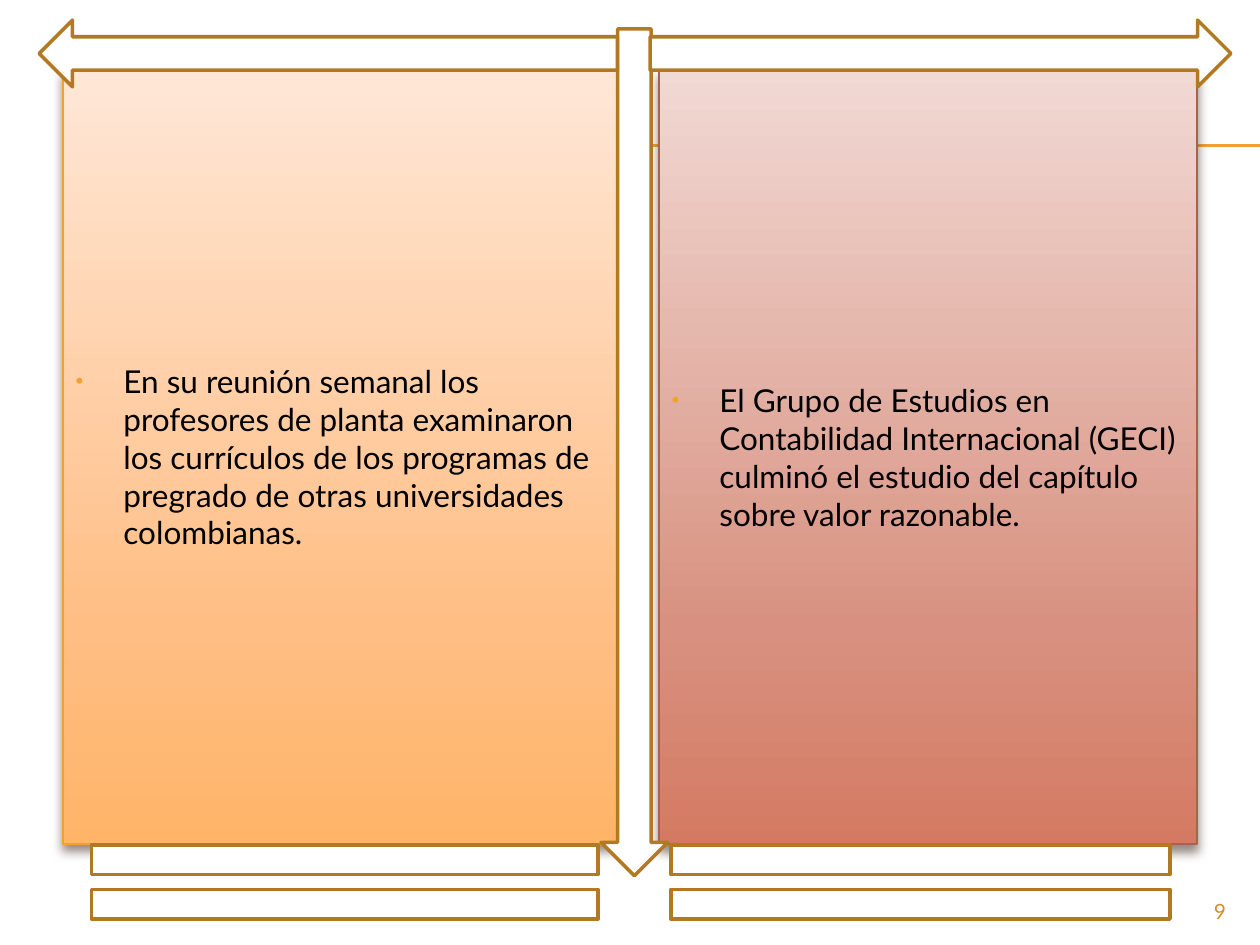
"""Build a two-panel news slide framed by block arrows and equal signs."""
from dataclasses import dataclass

from lxml import etree
from pptx import Presentation
from pptx.dml.color import RGBColor
from pptx.enum.shapes import MSO_CONNECTOR, MSO_SHAPE
from pptx.enum.text import MSO_ANCHOR, MSO_AUTO_SIZE, PP_ALIGN
from pptx.oxml.ns import qn
from pptx.util import Inches, Pt

STRAIGHT = MSO_CONNECTOR.STRAIGHT
DOWN, RIGHT, LEFT = MSO_SHAPE.DOWN_ARROW, MSO_SHAPE.RIGHT_ARROW, MSO_SHAPE.LEFT_ARROW
EQUAL = MSO_SHAPE.MATH_EQUAL
MIDDLE, NO_FIT, ALIGN_RIGHT = MSO_ANCHOR.MIDDLE, MSO_AUTO_SIZE.NONE, PP_ALIGN.RIGHT

WIDTH, HEIGHT = Inches(10), Inches(7.5)
COLUMNS, ROWS = 100, 75
FONT = "Lato"
COLOURS = {
    "text": "000000",
    "white": "FFFFFF",
    "accent": "F0A22E",
    "outline": "B27822",
    "number": "D48F29",
    "brick": "A5644E",
    "shadow": "4E3B30",
}


@dataclass(frozen=True)
class Frame:
    """A rectangle in grid columns and rows."""
    column: float
    row: float
    columns: float
    rows: float

    def lengths(self) -> tuple[int, int, int, int]:
        return (across(self.column), down(self.row),
                across(self.columns), down(self.rows))


@dataclass(frozen=True)
class Panel:
    """A gradient text panel."""
    frame: Frame
    stops: tuple[str, str, str]
    outline: str
    text: str


@dataclass(frozen=True)
class Ornament:
    """A white outlined preset shape."""
    kind: int
    frame: Frame


PANELS = (
    Panel(Frame(5, 5.5, 44.2, 61.5), ("FFE7D7", "FFBE84", "FFB468"), "accent",
          "En su reunión semanal los profesores de planta examinaron los currículos "
          "de los programas de pregrado de otras universidades colombianas."),
    Panel(Frame(52.3, 5.5, 42.7, 61.5), ("F1D9D4", "D89180", "D47A62"), "brick",
          "El Grupo de Estudios en Contabilidad Internacional (GECI) culminó el "
          "estudio del capítulo sobre valor razonable."),
)
ORNAMENTS = (
    Ornament(DOWN, Frame(47.7, 2.3, 5.3, 67.2)),
    Ornament(RIGHT, Frame(51.6, 1.6, 46.1, 5.3)),
    Ornament(LEFT, Frame(3.1, 1.6, 45.9, 5.3)),
    Ornament(EQUAL, Frame(0, 65, 54.7, 10)),
    Ornament(EQUAL, Frame(46.1, 65, 53.9, 10)),
)
RULE_ROWS = (11.5, 11.6)
NUMBER_FRAME = Frame(90, 70.8, 8.3, 2.7)


def across(columns: float) -> int:
    return round(WIDTH * columns / COLUMNS)


def down(rows: float) -> int:
    return round(HEIGHT * rows / ROWS)


def colour(name: str) -> RGBColor:
    return RGBColor.from_string(COLOURS[name])


def add_node(parent, tag: str, **attributes):
    """Append a drawing element with its attributes."""
    node = etree.SubElement(parent, qn(tag))
    for name, value in attributes.items():
        node.set(name, str(value))
    return node


def set_outline(line, name: str, width: float) -> None:
    line.color.rgb = colour(name)
    line.width = Pt(width)


def write(paragraph, text: str, size: float, name: str) -> None:
    span = paragraph.add_run()
    span.text = text
    span.font.name, span.font.size = FONT, Pt(size)
    span.font.color.rgb = colour(name)


def draw_rule(page, row: float) -> None:
    rule = page.shapes.add_connector(STRAIGHT, across(5.6), down(row), WIDTH, down(row))
    set_outline(rule.line, "accent", 0.75)
    add_node(rule._element.spPr, "a:effectLst")


def set_bullet(paragraph) -> None:
    """Give the paragraph a hanging accent bullet."""
    properties = paragraph._p.get_or_add_pPr()
    properties.set("marL", str(Inches(0.38)))
    properties.set("indent", str(-Inches(0.38)))
    tint = add_node(properties, "a:buClr")
    add_node(tint, "a:srgbClr", val=COLOURS["accent"])
    add_node(properties, "a:buSzPct", val=70000)
    add_node(properties, "a:buFont", typeface="Arial")
    add_node(properties, "a:buChar", char="•")


def draw_panel(box, panel: Panel) -> None:
    """Place and format a body placeholder as a gradient panel."""
    box.left, box.top, box.width, box.height = panel.frame.lengths()
    properties = box._element.spPr
    gradient = add_node(properties, "a:gradFill", rotWithShape=1)
    stops = add_node(gradient, "a:gsLst")
    for share, value in zip((0, 72, 100), panel.stops):
        stop = add_node(stops, "a:gs", pos=share * 1000)
        add_node(stop, "a:srgbClr", val=value)
    add_node(gradient, "a:lin", ang=90 * 60000, scaled=0)
    set_outline(box.line, panel.outline, 0.79)
    effects = add_node(properties, "a:effectLst")
    shadow = add_node(effects, "a:outerShdw", blurRad=Pt(6), dist=Pt(4),
                      dir=90 * 60000, algn="ctr", rotWithShape=0)
    tint = add_node(shadow, "a:srgbClr", val=COLOURS["shadow"])
    add_node(tint, "a:alpha", val=60000)
    frame = box.text_frame
    frame.word_wrap, frame.auto_size = True, NO_FIT
    frame.vertical_anchor = MIDDLE
    para = frame.paragraphs[0]
    para.space_before = Pt(3.6)
    set_bullet(para)
    write(para, panel.text, 18, "text")


def draw_ornament(page, ornament: Ornament) -> None:
    shape = page.shapes.add_shape(ornament.kind, *ornament.frame.lengths())
    shape.shadow.inherit = False
    shape.fill.solid()
    shape.fill.fore_color.rgb = colour("white")
    set_outline(shape.line, "outline", 2)


def draw_number(page, text: str) -> None:
    box = page.shapes.add_textbox(*NUMBER_FRAME.lengths())
    box.text_frame.word_wrap = True
    para = box.text_frame.paragraphs[0]
    para.alignment = ALIGN_RIGHT
    write(para, text, 12, "number")


def main() -> None:
    deck = Presentation()
    deck.slide_width, deck.slide_height = WIDTH, HEIGHT
    page = deck.slides.add_slide(deck.slide_layouts.get_by_name("Two Content"))
    title = page.shapes.title._element
    title.getparent().remove(title)
    bodies = list(page.placeholders)
    for row in RULE_ROWS:
        draw_rule(page, row)
    for box, panel in zip(bodies, PANELS):
        page.shapes._spTree.append(box._element)
        draw_panel(box, panel)
    for ornament in ORNAMENTS:
        draw_ornament(page, ornament)
    draw_number(page, "9")
    deck.save("out.pptx")


if __name__ == "__main__":
    main()
